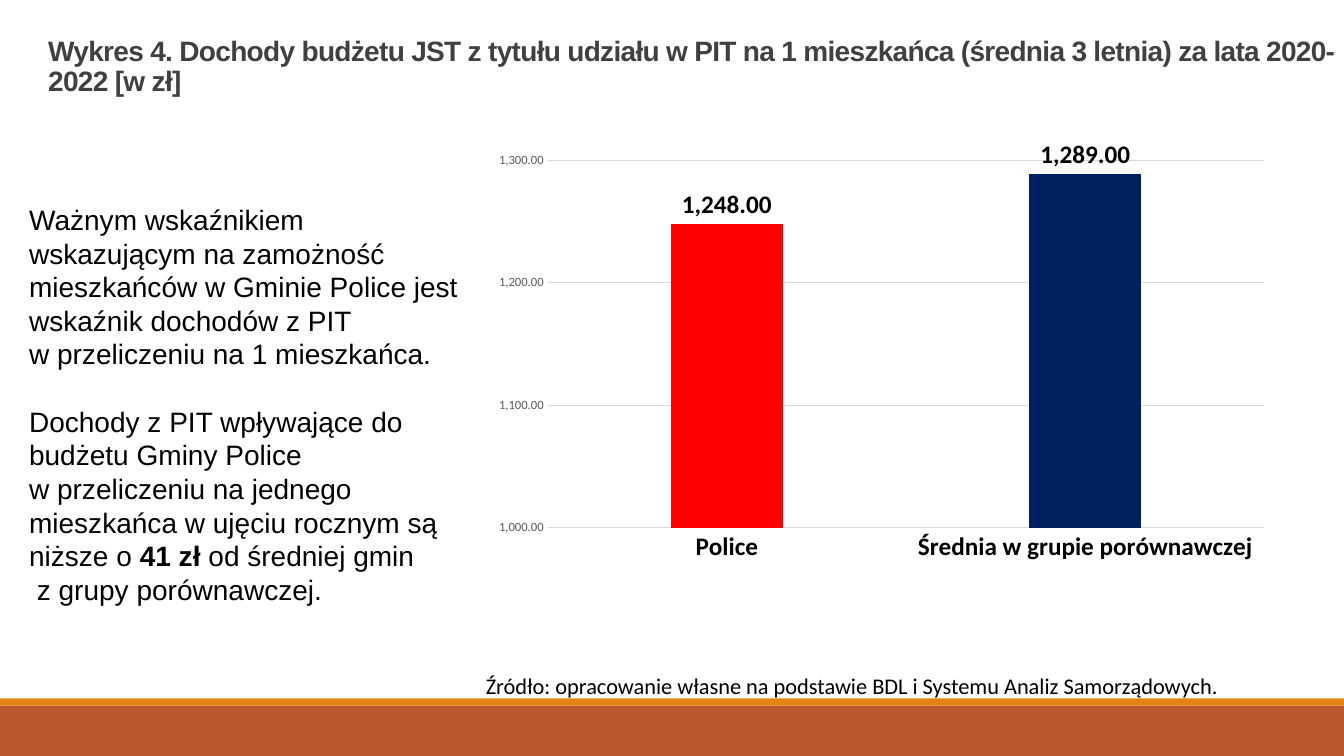
from lxml import etree
from pptx import Presentation, util as u
from pptx.chart import data
from pptx.dml import color
from pptx.enum import chart as ch, shapes, text

W, H = 13.33, 7.5
prs = Presentation()
prs.slide_width, prs.slide_height = u.Inches(W), u.Inches(H)
s = prs.slides.add_slide(prs.slide_layouts[6])


def rgb(hex_code):
    return color.RGBColor.from_string(hex_code)


def add_text(box, paragraphs, size, font, hex_code, anchor, spacing=1.0, gap=0):
    """Paragraphs are lists of (text, bold); a newline is a line break."""
    tf = s.shapes.add_textbox(*map(u.Inches, box)).text_frame
    tf.word_wrap = True
    tf.vertical_anchor = anchor
    for i, runs in enumerate(paragraphs):
        p = tf.paragraphs[0] if i == 0 else tf.add_paragraph()
        p.line_spacing = spacing
        p.space_before = u.Pt(gap if i else 0)
        p.font.size, p.font.name = u.Pt(size), font
        p.font.color.rgb = rgb(hex_code)
        for words, bold in runs:
            for j, line in enumerate(words.split("\n")):
                if j:
                    p.add_line_break()
                r = p.add_run()
                r.text = line
                r.font.size, r.font.name, r.font.bold = u.Pt(size), font, bold
                r.font.color.rgb = rgb(hex_code)
    return tf


# Footer bands
for top, height, fill in ((7, 0.5, "BD582C"), (6.93, 0.07, "E48312")):
    sp = s.shapes.add_shape(shapes.MSO_SHAPE.RECTANGLE, 0, u.Inches(top),
                            prs.slide_width, u.Inches(height))
    sp.shadow.inherit = False
    sp.fill.solid()
    sp.fill.fore_color.rgb = rgb(fill)
    sp.line.fill.background()

# Title, with slightly tightened letters
title = add_text(
    (0.38, 0, 12.96, 1.02),
    [[("Wykres 4. Dochody budżetu JST z tytułu udziału w PIT na 1 mieszkańca "
       "(średnia 3 letnia) za lata 2020-2022 [w zł]", True)]],
    20, "Arial", "404040", text.MSO_ANCHOR.BOTTOM, 0.9)
for r in title.paragraphs[0].runs:
    r.font._element.set("spc", "-50")

# Commentary
add_text(
    (0.19, 1.96, 4.53, 4.14),
    [[("Ważnym wskaźnikiem wskazującym na zamożność mieszkańców w Gminie Police "
       "jest wskaźnik dochodów z PIT \nw przeliczeniu na 1 mieszkańca.", False)],
     [("Dochody z PIT wpływające do budżetu Gminy Police \nw przeliczeniu na "
       "jednego mieszkańca w ujęciu rocznym są niższe o ", False),
      ("41 zł", True),
      (" od średniej gmin\n z grupy porównawczej.", False)]],
    20, "Arial", "000000", text.MSO_ANCHOR.TOP, u.Pt(24), 24)

# Source note
add_text(
    (4.72, 6.62, 7.56, 0.37),
    [[("Źródło: opracowanie własne na podstawie BDL i Systemu Analiz "
       "Samorządowych.", False)]],
    16, "Calibri", "000000", text.MSO_ANCHOR.MIDDLE).word_wrap = False

# Column chart
cd = data.CategoryChartData(number_format="#,##0.00")
cd.categories = ["Police", "Średnia w grupie porównawczej"]
cd.add_series("Dochody z PIT", (1248, 1289))
chart = s.shapes.add_chart(ch.XL_CHART_TYPE.COLUMN_CLUSTERED,
                           *map(u.Inches, (4.8, 1.38, 7.9, 4.59)), cd).chart
chart.has_legend = chart.has_title = False
chart.font.name, chart.font.size = "Calibri", u.Pt(10)

# Bars and their labels
plot = chart.plots[0]
plot.gap_width, plot.overlap, plot.vary_by_categories = 219, -27, False
series = plot.series[0]
series.invert_if_negative = False
for target, fill in ((series, "FF0000"), (series.points[1], "002060")):
    target.format.fill.solid()
    target.format.fill.fore_color.rgb = rgb(fill)
labels = series.data_labels
labels.show_value = True
labels.position = ch.XL_LABEL_POSITION.OUTSIDE_END
labels.number_format, labels.number_format_is_linked = "#,##0.00", False

# Axes
cat, val = chart.category_axis, chart.value_axis
val.minimum_scale, val.maximum_scale, val.major_unit = 1000, 1300, 100
val.tick_labels.number_format = "#,##0.00"
val.tick_labels.number_format_is_linked = False
val.format.line.fill.background()
for axis in (cat, val):
    axis.major_tick_mark = axis.minor_tick_mark = ch.XL_TICK_MARK.NONE
for line in (cat.format.line, val.major_gridlines.format.line):
    line.color.rgb, line.width = rgb("D9D9D9"), u.Pt(0.75)
for font, size, hex_code, bold in ((labels.font, 18, "000000", True),
                                   (cat.tick_labels.font, 18, "000000", True),
                                   (val.tick_labels.font, 9, "595959", False)):
    font.name, font.size, font.bold = "Calibri", u.Pt(size), bold
    font.color.rgb = rgb(hex_code)

# Plot area as shares of the chart
area = chart._chartSpace.chart.plotArea
ns = "{http://schemas.openxmlformats.org/drawingml/2006/chart}"
for old in area.findall(ns + "layout"):
    area.remove(old)
layout = etree.Element(ns + "layout")
area.insert(0, layout)
manual = etree.SubElement(layout, ns + "manualLayout")
for tag, value in (("layoutTarget", "inner"), ("xMode", "edge"), ("yMode", "edge"),
                   ("x", "0.08"), ("y", "0.045"), ("w", "0.9"), ("h", "0.795")):
    etree.SubElement(manual, ns + tag).set("val", value)

prs.save("out.pptx")
